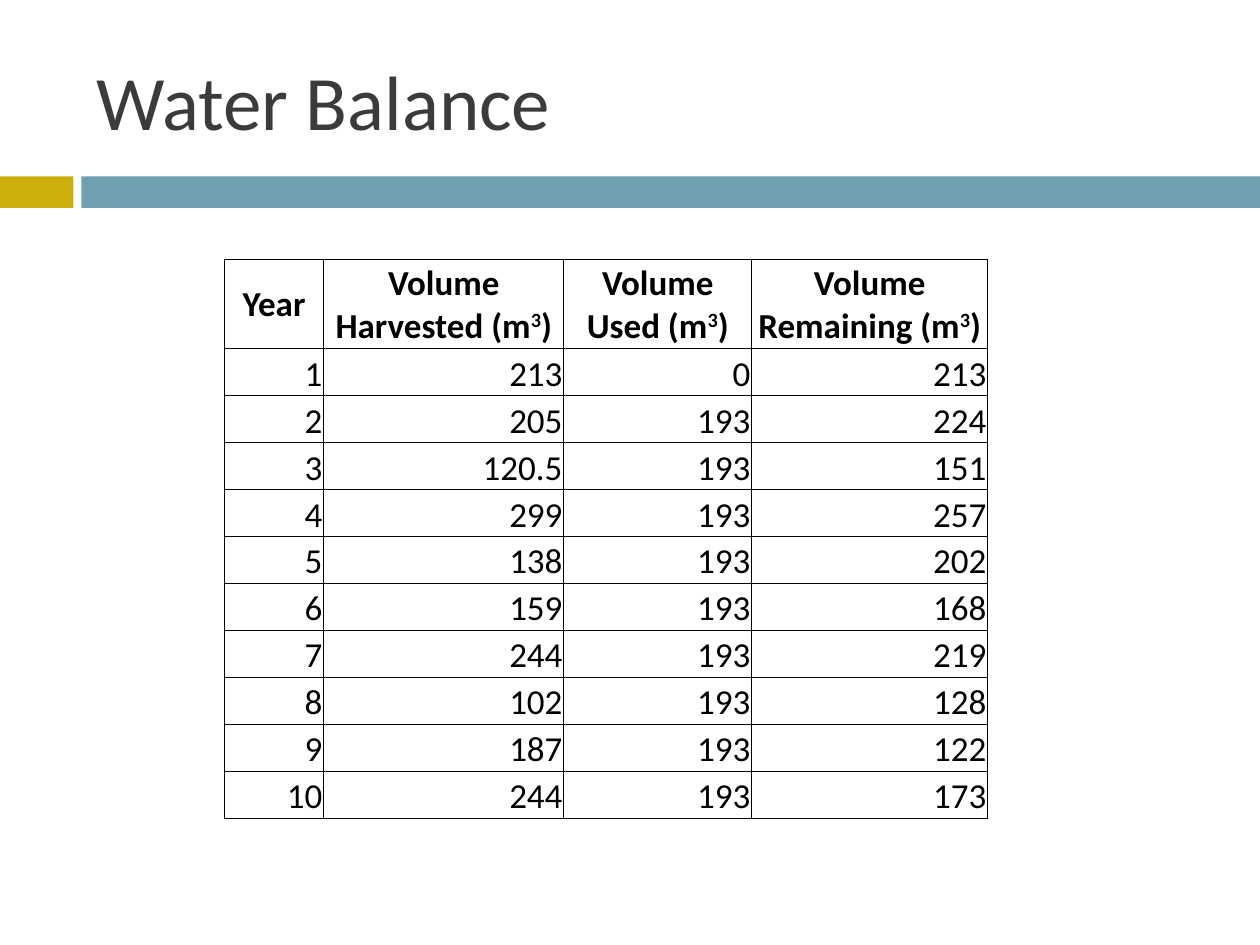
from dataclasses import dataclass

from lxml.etree import SubElement
from pptx import Presentation
from pptx.dml.color import RGBColor
from pptx.enum.shapes import MSO_SHAPE
from pptx.enum.text import MSO_ANCHOR, PP_ALIGN
from pptx.oxml.ns import qn
from pptx.util import Pt


@dataclass(frozen=True)
class Theme:
    font: str = "Calibri"
    title: str = "3B3B3B"
    ink: str = "000000"
    gold: str = "CCAF0A"
    blue: str = "6EA0B0"
    title_size: float = 44
    cell_size: float = 20
    rule: float = 0.5


THEME = Theme()

WIDTHS = [56.7, 137.2, 107.4, 134.9]
HEAD_HIGH, ROW_HIGH = 50.9, 26.86

HEADS = ["Year", "Volume Harvested", "Volume Used", "Volume Remaining"]
HARVEST = ["213", "205", "120.5", "299", "138", "159", "244", "102", "187", "244"]
USED = ["0"] + ["193"] * 9
REMAIN = ["213", "224", "151", "257", "202", "168", "219", "128", "122", "173"]


def add_run(para, text, size, color, bold=False, raised=False):
    run = para.add_run()
    run.text = text
    run.font.name = THEME.font
    run.font.size = Pt(size)
    run.font.bold = bold
    run.font.color.rgb = RGBColor.from_string(color)
    if raised:
        run._r.get_or_add_rPr().set("baseline", "30000")


def add_bar(slide, left, width, color):
    bar = slide.shapes.add_shape(
        MSO_SHAPE.RECTANGLE, Pt(left), Pt(100.8), Pt(width), Pt(18))
    bar.shadow.inherit = False
    bar.fill.solid()
    bar.fill.fore_color.rgb = RGBColor.from_string(color)
    bar.line.fill.background()


def add_title(slide, text):
    box = slide.shapes.add_textbox(Pt(48), Pt(18), Pt(642), Pt(78))
    frame = box.text_frame
    frame.word_wrap = True
    frame.vertical_anchor = MSO_ANCHOR.MIDDLE
    add_run(frame.paragraphs[0], text, THEME.title_size, THEME.title)


def add_edges(cell):
    props = cell._tc.get_or_add_tcPr()
    for side in ("lnL", "lnR", "lnT", "lnB"):
        edge = SubElement(props, qn(f"a:{side}"), w=str(Pt(THEME.rule)))
        fill = SubElement(edge, qn("a:solidFill"))
        SubElement(fill, qn("a:srgbClr"), val=THEME.ink)


def fill_cell(cell, parts, head):
    """Style one cell and write its parts, every second one raised."""
    add_edges(cell)
    cell.fill.background()
    cell.margin_left = cell.margin_right = cell.margin_top = Pt(0.75)
    cell.margin_bottom = Pt(0)
    cell.vertical_anchor = MSO_ANCHOR.MIDDLE if head else MSO_ANCHOR.BOTTOM
    para = cell.text_frame.paragraphs[0]
    para.alignment = PP_ALIGN.CENTER if head else PP_ALIGN.RIGHT
    for i, text in enumerate(parts):
        add_run(para, text, THEME.cell_size, THEME.ink, head, i % 2 == 1)


def add_grid(slide):
    heads = [[HEADS[0]]] + [[f"{name} (m", "3", ")"] for name in HEADS[1:]]
    years = [str(n) for n in range(1, len(HARVEST) + 1)]
    body = [[[text] for text in row]
            for row in zip(years, HARVEST, USED, REMAIN)]
    rows = [heads] + body
    highs = [HEAD_HIGH] + [ROW_HIGH] * len(body)
    table = slide.shapes.add_table(
        len(rows), len(WIDTHS), Pt(128.3), Pt(148.3),
        Pt(sum(WIDTHS)), Pt(sum(highs))).table
    table.first_row = table.horz_banding = False
    for col, width in zip(table.columns, WIDTHS):
        col.width = Pt(width)
    for r, (row, high) in enumerate(zip(rows, highs)):
        table.rows[r].height = Pt(high)
        for c, parts in enumerate(row):
            fill_cell(table.cell(r, c), parts, r == 0)


def main():
    deck = Presentation()
    deck.slide_width, deck.slide_height = Pt(720), Pt(540)
    slide = deck.slides.add_slide(deck.slide_layouts[6])
    add_bar(slide, 0, 42, THEME.gold)
    add_bar(slide, 46.5, 673.5, THEME.blue)
    add_title(slide, "Water Balance")
    add_grid(slide)
    deck.save("out.pptx")


if __name__ == "__main__":
    main()
